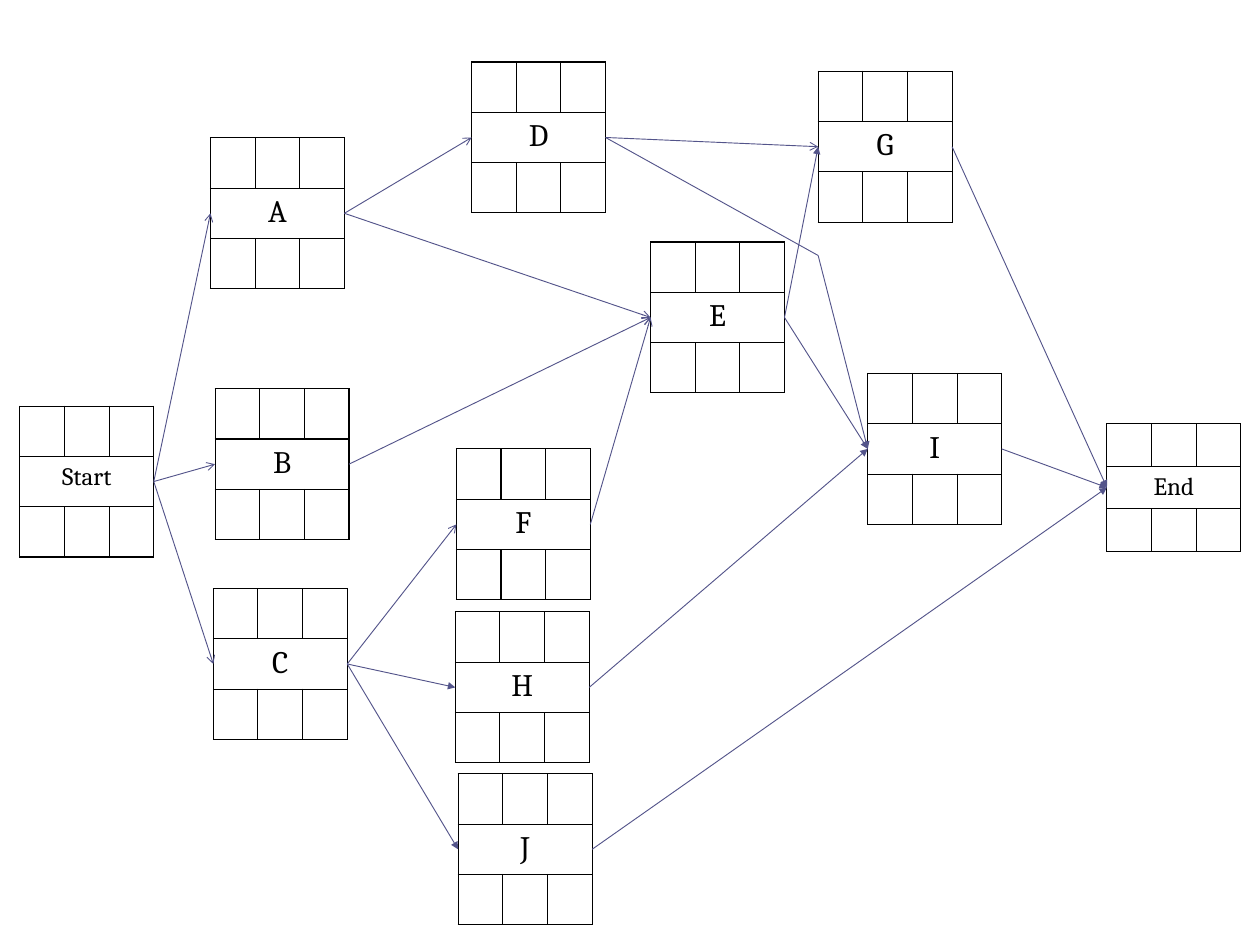
import pptx
import pptx.util
import pptx.dml.color
import pptx.enum.shapes
import pptx.enum.text
import pptx.oxml
import pptx.oxml.ns
from pptx.util import Cm, Pt

BLACK = pptx.dml.color.RGBColor(0x00, 0x00, 0x00)
INDIGO = pptx.dml.color.RGBColor(0x53, 0x54, 0x8A)

TASKS = {
    "Start": (0.56, 11.46),
    "A": (5.94, 3.89),
    "B": (6.07, 10.97),
    "C": (6.02, 16.61),
    "D": (13.31, 1.75),
    "E": (18.36, 6.83),
    "F": (12.88, 12.67),
    "G": (23.09, 2.01),
    "H": (12.85, 17.27),
    "I": (24.49, 10.54),
    "J": (12.93, 21.84),
    "End": (31.24, 11.96),
}
OPEN_LINKS = ["Start A", "Start B", "Start C", "A D", "D G", "A E", "B E", "C F", "F E"]
SOLID_LINKS = ["C H", "C J", "E I", "H I", "J End", "I End", "G End", "E G"]
BEND = (23.09, 7.21)

COLUMN_WIDTH = 1.26
ROW_HEIGHT = 1.42
END_ROW_HEIGHT = 1.2
LETTER_SIZE = 25
WORD_SIZE = 20

TABLE_FORMAT = {"first_row": False, "horz_banding": False}
CELL_FORMAT = {
    "margin_left": Cm(0.36),
    "margin_right": Cm(0.36),
    "margin_top": Cm(0.18),
    "margin_bottom": Cm(0.18),
}
FONT_FORMAT = {"name": "Cambria", "bold": False}


def apply(target, values):
    for name, value in values.items():
        setattr(target, name, value)


def row_height(name):
    return END_ROW_HEIGHT if name == "End" else ROW_HEIGHT


def side(name, right):
    left, top = TASKS[name]
    return left + right * 3 * COLUMN_WIDTH, top + 1.5 * row_height(name)


def add_borders(cell):
    properties = cell._tc.get_or_add_tcPr()
    for edge in ("lnL", "lnR", "lnT", "lnB"):
        properties.append(pptx.oxml.parse_xml(
            f'<a:{edge} {pptx.oxml.ns.nsdecls("a")} w="{Pt(1)}"><a:solidFill>'
            f'<a:srgbClr val="{BLACK}"/></a:solidFill></a:{edge}>'))


def add_task(slide, name):
    left, top = TASKS[name]
    height = row_height(name)
    frame = slide.shapes.add_table(
        3, 3, Cm(left), Cm(top), Cm(3 * COLUMN_WIDTH), Cm(3 * height))
    table = frame.table
    apply(table, TABLE_FORMAT)
    for column in table.columns:
        column.width = Cm(COLUMN_WIDTH)
    for row in table.rows:
        row.height = Cm(height)
    for cell in table.iter_cells():
        apply(cell, CELL_FORMAT)
        add_borders(cell)
        cell.fill.background()
    label = table.cell(1, 0)
    label.merge(table.cell(1, 2))
    para = label.text_frame.paragraphs[0]
    para.alignment = pptx.enum.text.PP_ALIGN.CENTER
    span = para.add_run()
    span.text = name
    apply(span.font, FONT_FORMAT)
    span.font.size = Pt(LETTER_SIZE if len(name) == 1 else WORD_SIZE)
    span.font.color.rgb = BLACK


def add_link(slide, start, end, head=None):
    link = slide.shapes.add_connector(
        pptx.enum.shapes.MSO_CONNECTOR.STRAIGHT, *map(Cm, start + end))
    link.line.width = Pt(0.75)
    link.line.color.rgb = INDIGO
    if head:
        link.line._get_or_add_ln().append(pptx.oxml.parse_xml(
            f'<a:tailEnd {pptx.oxml.ns.nsdecls("a")} type="{head}"/>'))
    link._element.spPr.append(pptx.oxml.parse_xml(
        f'<a:effectLst {pptx.oxml.ns.nsdecls("a")}/>'))


def main():
    deck = pptx.Presentation()
    apply(deck, {"slide_width": Cm(35.56), "slide_height": Cm(26.67)})
    slide = deck.slides.add_slide(deck.slide_layouts[6])
    for name in TASKS:
        add_task(slide, name)
    for head, links in (("arrow", OPEN_LINKS), ("triangle", SOLID_LINKS)):
        for link in links:
            source, target = link.split()
            add_link(slide, side(source, True), side(target, False), head)
    add_link(slide, side("D", True), BEND)
    add_link(slide, BEND, side("I", False), "triangle")
    deck.save("out.pptx")


if __name__ == "__main__":
    main()
